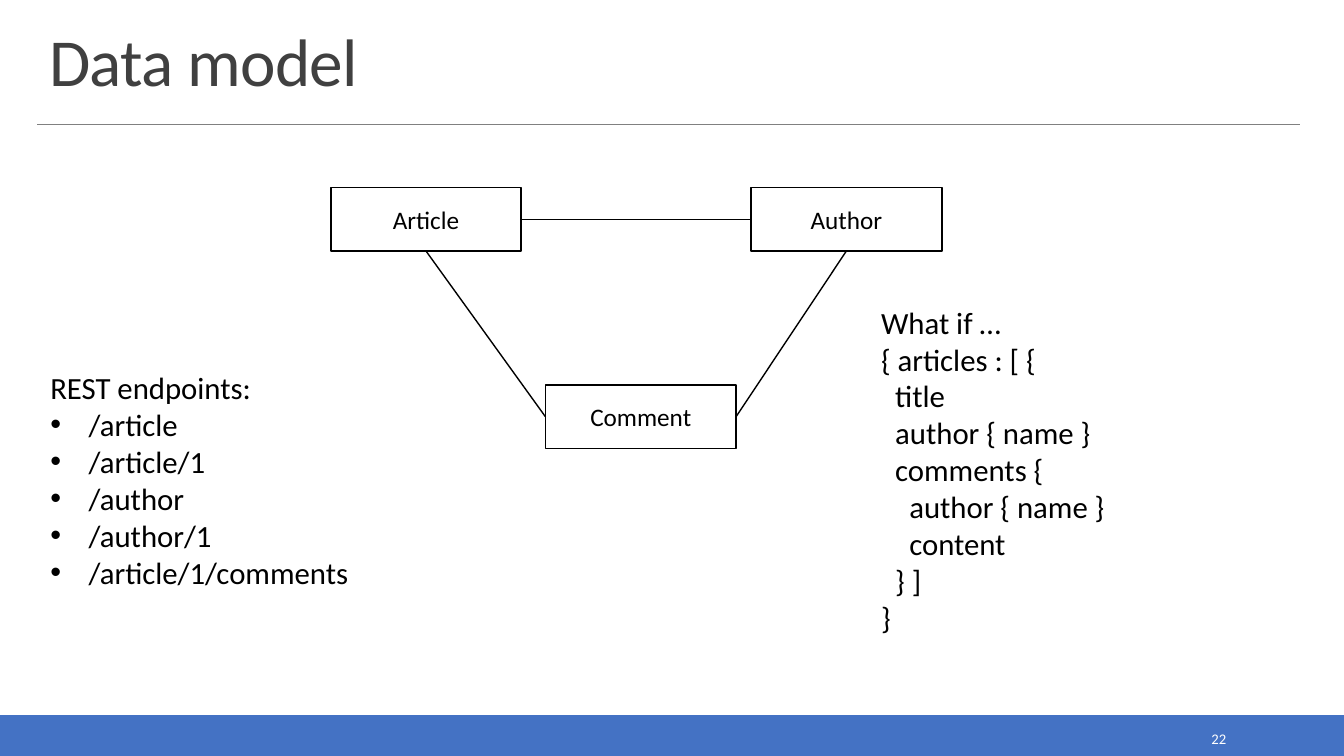
from lxml import etree
from pptx import Presentation
from pptx.dml.color import RGBColor
from pptx.enum import shapes, text
from pptx.oxml.ns import qn
from pptx.util import Inches, Pt

BLACK = RGBColor(0x00, 0x00, 0x00)
WHITE = RGBColor(0xFF, 0xFF, 0xFF)
BLUE = RGBColor(0x44, 0x72, 0xC4)
GRAY = RGBColor(0x80, 0x80, 0x80)
DARK_GRAY = RGBColor(0x40, 0x40, 0x40)
FONT = "Calibri"
TOP, LEFT, BOTTOM, RIGHT = range(4)
BULLET_INDENT = 0.38
CODE_INDENT = 0.14

ENDPOINTS = ["/article", "/article/1", "/author", "/author/1", "/article/1/comments"]
QUERY = [
    (0, "What if …"),
    (0, "{ articles : [ {"),
    (1, "title"),
    (1, "author { name }"),
    (1, "comments {"),
    (2, "author { name }"),
    (2, "content"),
    (1, "} ]"),
    (0, "}"),
]


def format_paragraph(paragraph, size, color=BLACK, align=text.PP_ALIGN.LEFT):
    """Set the alignment of a paragraph and the font of its runs."""
    paragraph.alignment = align
    for run in paragraph.runs:
        run.font.name = FONT
        run.font.size = Pt(size)
        run.font.color.rgb = color


def add_text(slide, box, lines, size, color=BLACK, anchor=text.MSO_ANCHOR.TOP,
             align=text.PP_ALIGN.LEFT):
    """Add a wrapping text box with one paragraph per line and return its paragraphs."""
    frame = slide.shapes.add_textbox(*map(Inches, box)).text_frame
    frame.word_wrap = True
    frame.vertical_anchor = anchor
    frame.text = "\n".join(lines)
    for paragraph in frame.paragraphs:
        format_paragraph(paragraph, size, color, align)
    return frame.paragraphs


def indent(paragraph, margin, bullet=None):
    """Indent a paragraph, hanging it on a bullet when one is given."""
    properties = paragraph._p.get_or_add_pPr()
    properties.set("marL", str(Inches(margin)))
    if bullet:
        properties.set("indent", str(-Inches(margin)))
        etree.SubElement(properties, qn("a:buFont")).set("typeface", "Arial")
        etree.SubElement(properties, qn("a:buChar")).set("char", bullet)


def add_line(slide, start, end, color, width):
    """Add a straight line without a shadow."""
    line = slide.shapes.add_connector(
        shapes.MSO_CONNECTOR.STRAIGHT, *map(Inches, (*start, *end)))
    line.line.color.rgb = color
    line.line.width = Pt(width)
    etree.SubElement(line._element.spPr, qn("a:effectLst"))
    return line


def add_header(slide, box, title):
    """Add the title and the rule below it."""
    left, top, width, height = box
    paragraph = add_text(slide, (left + 0.02, top, width, height), [title], 48,
                         DARK_GRAY, text.MSO_ANCHOR.BOTTOM)[0]
    paragraph.line_spacing = 0.85
    paragraph.runs[0].font._element.set("spc", "-50")
    rule = top + height + 0.19
    add_line(slide, (left, rule), (left + width, rule), GRAY, 0.5)


def add_footer(slide, box, number):
    """Add the footer band with the slide number."""
    left, top, width, height = box
    band = slide.shapes.add_shape(shapes.MSO_SHAPE.RECTANGLE, *map(Inches, box))
    band.shadow.inherit = False
    band.fill.solid()
    band.fill.fore_color.rgb = BLUE
    band.line.color.rgb = BLUE
    band.line.width = Pt(1.25)
    add_text(slide, (left + width - 2.5, top + 0.09, 1.43, 0.28), [number], 10.5,
             WHITE, text.MSO_ANCHOR.MIDDLE, text.PP_ALIGN.RIGHT)


def add_entity(slide, left, top, name):
    """Add an outlined entity box with its name."""
    entity = slide.shapes.add_shape(
        shapes.MSO_SHAPE.RECTANGLE, *map(Inches, (left, top, 1.89, 0.63)))
    entity.shadow.inherit = False
    entity.fill.background()
    entity.line.color.rgb = BLACK
    entity.line.width = Pt(1.25)
    entity.text_frame.text = name
    entity.text_frame.vertical_anchor = text.MSO_ANCHOR.MIDDLE
    format_paragraph(entity.text_frame.paragraphs[0], 18, align=text.PP_ALIGN.CENTER)
    return entity


def add_model(slide, left, top):
    """Add the three entities and the relations between them."""
    article = add_entity(slide, left, top, "Article")
    author = add_entity(slide, left + 4.17, top, "Author")
    comment = add_entity(slide, left + 2.13, top + 1.96, "Comment")
    for source, source_side, target, target_side in (
        (article, RIGHT, author, LEFT),
        (article, BOTTOM, comment, LEFT),
        (comment, RIGHT, author, BOTTOM),
    ):
        relation = add_line(slide, (left, top), (left, top), BLACK, 1)
        relation.begin_connect(source, source_side)
        relation.end_connect(target, target_side)


def add_endpoints(slide, box):
    """Add the bulleted list of endpoints under its heading."""
    paragraphs = add_text(slide, box, ["REST endpoints:", *ENDPOINTS], 22)
    for paragraph in paragraphs[1:]:
        indent(paragraph, BULLET_INDENT, "•")


def add_query(slide, box):
    """Add the query, indented by nesting level."""
    paragraphs = add_text(slide, box, [line for _, line in QUERY], 22)
    for paragraph, (level, _) in zip(paragraphs, QUERY):
        indent(paragraph, level * CODE_INDENT)


def main():
    """Build the data model slide and save it."""
    presentation = Presentation()
    presentation.slide_width = Inches(13.33)
    presentation.slide_height = Inches(7.5)
    slide = presentation.slides.add_slide(presentation.slide_layouts[6])
    add_footer(slide, (0, 7.1, 13.33, 0.4), "22")
    add_header(slide, (0.37, 0.2, 12.52, 0.84), "Data model")
    add_model(slide, 3.28, 1.86)
    add_endpoints(slide, (0.4, 3.61, 4.15, 2.32))
    add_query(slide, (8.64, 2.96, 4.15, 3.43))
    presentation.save("out.pptx")


if __name__ == "__main__":
    main()
